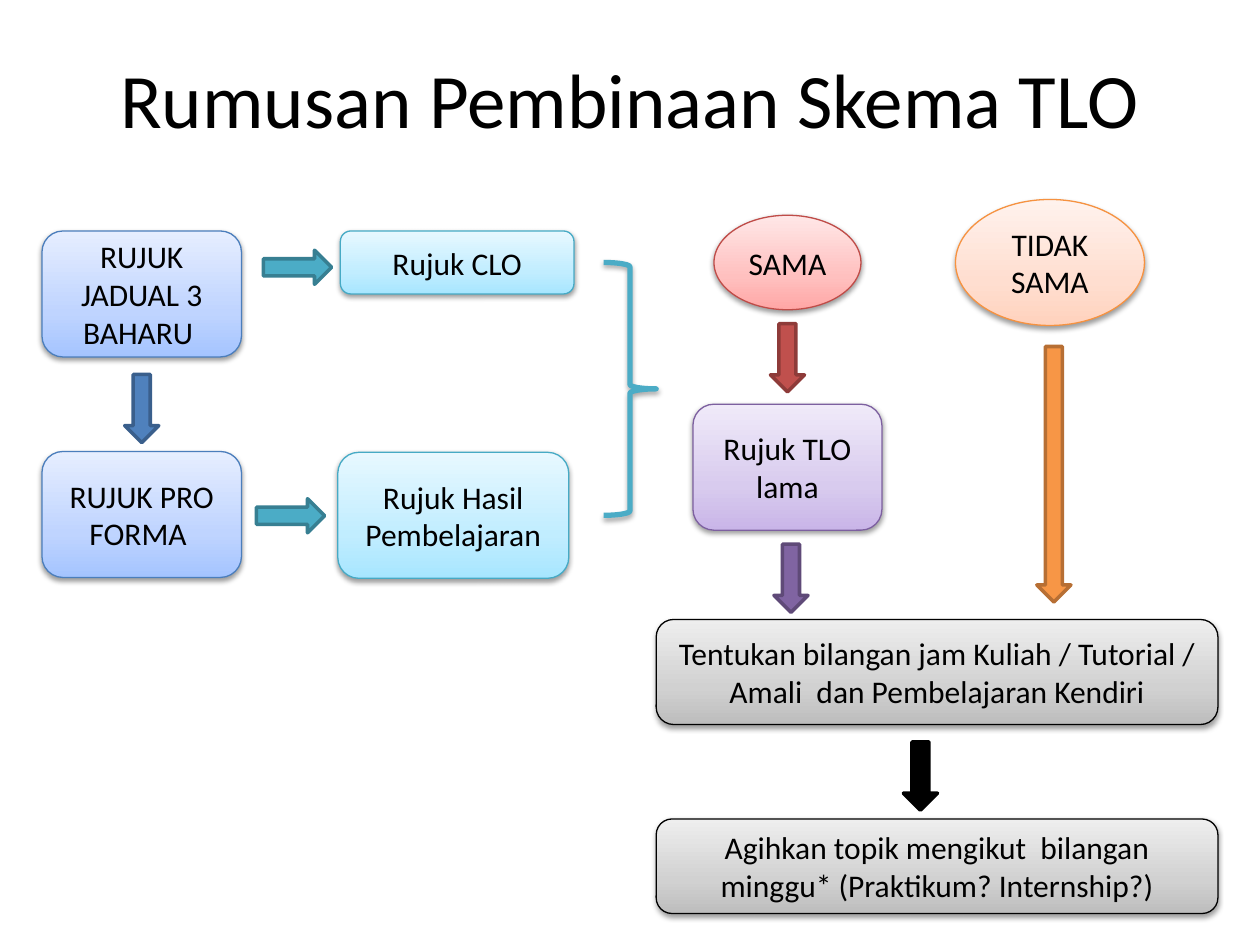
"""Build the flow slide that sums up how a TLO scheme is drawn up."""
from copy import deepcopy

from lxml import etree
from pptx import Presentation
from pptx.dml.color import RGBColor
from pptx.enum.shapes import MSO_SHAPE
from pptx.enum.text import MSO_ANCHOR, PP_ALIGN
from pptx.oxml.ns import qn
from pptx.util import Pt

ROUNDED, OVAL, BRACE = MSO_SHAPE.ROUNDED_RECTANGLE, MSO_SHAPE.OVAL, MSO_SHAPE.RIGHT_BRACE
RIGHT, DOWN = MSO_SHAPE.RIGHT_ARROW, MSO_SHAPE.DOWN_ARROW
CENTER, MIDDLE = PP_ALIGN.CENTER, MSO_ANCHOR.MIDDLE
FONT = "Calibri"
BLACK = RGBColor(0, 0, 0)
TEAL, TEAL_EDGE = RGBColor(0x4B, 0xAC, 0xC6), RGBColor(0x37, 0x7F, 0x92)
BLUE, BLUE_EDGE = RGBColor(0x4F, 0x81, 0xBD), RGBColor(0x3A, 0x5F, 0x8C)
RED, RED_EDGE = RGBColor(0xC0, 0x50, 0x4D), RGBColor(0x8E, 0x3B, 0x39)
PURPLE, PURPLE_EDGE = RGBColor(0x80, 0x64, 0xA2), RGBColor(0x5F, 0x4A, 0x78)
ORANGE, ORANGE_EDGE = RGBColor(0xF7, 0x96, 0x46), RGBColor(0xB7, 0x6F, 0x34)

STOPS = (0, 0.35, 1)
BLUE_TINT = [RGBColor.from_string(c) for c in ("A4C4FF", "BFD4FF", "E6EEFF", "4B7EBC")]
TEAL_TINT = [RGBColor.from_string(c) for c in ("A7E6FF", "C1EDFF", "E7F8FF", "46AAC5")]
GREY_TINT = [RGBColor.from_string(c) for c in ("BDBDBD", "D1D1D1", "EEEEEE", "000000")]
RED_TINT = [RGBColor.from_string(c) for c in ("FFA6A5", "FFC0BF", "FFE7E7", "BF4C48")]
PURPLE_TINT = [RGBColor.from_string(c) for c in ("C9B5E8", "D8CBEE", "F0EAF9", "7D60A0")]
ORANGE_TINT = [RGBColor.from_string(c) for c in ("FFD2BD", "FFDED0", "FFF2ED", "F69240")]

STEPS = [
    (ROUNDED, 24, 132, 114, 72, BLUE_TINT, "RUJUK JADUAL 3 BAHARU "),
    (ROUNDED, 24, 258, 114, 72, BLUE_TINT, "RUJUK PRO FORMA "),
    (ROUNDED, 194.5, 132, 133.5, 36, TEAL_TINT, "Rujuk CLO"),
    (ROUNDED, 193, 258.5, 132, 72, TEAL_TINT, "Rujuk Hasil Pembelajaran"),
    (OVAL, 408, 123, 84, 54, RED_TINT, "SAMA"),
    (OVAL, 546, 114, 108, 72, ORANGE_TINT, "TIDAK SAMA"),
    (ROUNDED, 396, 231, 108, 72, PURPLE_TINT, "Rujuk TLO lama"),
    (ROUNDED, 375, 354, 321, 60, GREY_TINT,
     "Tentukan bilangan jam Kuliah / Tutorial / Amali  dan Pembelajaran Kendiri"),
    (ROUNDED, 375, 468, 321, 54, GREY_TINT,
     "Agihkan topik mengikut  bilangan minggu* (Praktikum? Internship?)"),
]
THICK, LONG = 19.5, 39
ARROWS = [
    (RIGHT, 150.5, 143, LONG, THICK, TEAL, TEAL_EDGE),
    (RIGHT, 146.5, 285, LONG, THICK, TEAL, TEAL_EDGE),
    (DOWN, 71.25, 214, THICK, LONG, BLUE, BLUE_EDGE),
    (DOWN, 440.25, 185, THICK, LONG, RED, RED_EDGE),
    (DOWN, 442.25, 311, THICK, LONG, PURPLE, PURPLE_EDGE),
    (DOWN, 516.25, 424, THICK, LONG, BLACK, BLACK),
    (DOWN, 592.5, 198, THICK, 146, ORANGE, ORANGE_EDGE),
]


def add_outlined(kind, left, top, width, height, edge, weight):
    shape = slide.shapes.add_shape(kind, Pt(left), Pt(top), Pt(width), Pt(height))
    shape.shadow.inherit = False
    shape.line.color.rgb = edge
    shape.line.width = Pt(weight)
    return shape


def add_shadow(shape, distance, opacity):
    effects = shape._element.spPr.find(qn("a:effectLst"))
    shadow = etree.SubElement(effects, qn("a:outerShdw"), blurRad=str(Pt(3.1)),
                              dist=str(Pt(distance)), dir="5400000", rotWithShape="0")
    color = etree.SubElement(shadow, qn("a:srgbClr"), val="000000")
    etree.SubElement(color, qn("a:alpha"), val=str(opacity * 1000))


prs = Presentation()
prs.slide_width, prs.slide_height = Pt(720), Pt(540)
slide = prs.slides.add_slide(prs.slide_layouts[5])

title = slide.shapes.title
title.left, title.top, title.width, title.height = Pt(36), Pt(21.6), Pt(648), Pt(68.4)
title.text_frame.vertical_anchor = MIDDLE
heading = title.text_frame.paragraphs[0]
heading.alignment = CENTER
heading_run = heading.add_run()
heading_run.text = "Rumusan Pembinaan Skema TLO"
heading_run.font.name, heading_run.font.size = FONT, Pt(44)
heading_run.font.color.rgb = BLACK

brace = add_outlined(BRACE, 345, 150, 30, 144.5, TEAL, 3)
brace.fill.background()
add_shadow(brace, 1.8, 35)

for kind, left, top, width, height, tint, wording in STEPS:
    step = add_outlined(kind, left, top, width, height, tint[-1], 0.75)
    step.fill.gradient()
    step.fill.gradient_angle = 90
    stop_list = step._element.spPr.find(qn("a:gradFill")).find(qn("a:gsLst"))
    stop_list.insert(1, deepcopy(stop_list[0]))
    for stop, position, color in zip(step.fill.gradient_stops, STOPS, tint):
        stop.position = position
        stop.color.rgb = color
    add_shadow(step, 1.6, 38)
    step.text_frame.word_wrap = True
    step.text_frame.vertical_anchor = MIDDLE
    paragraph = step.text_frame.paragraphs[0]
    paragraph.alignment = CENTER
    run = paragraph.add_run()
    run.text = wording
    run.font.name, run.font.size = FONT, Pt(18)
    run.font.color.rgb = BLACK

for kind, left, top, width, height, color, edge in ARROWS:
    arrow = add_outlined(kind, left, top, width, height, edge, 2)
    arrow.fill.solid()
    arrow.fill.fore_color.rgb = color

prs.save("out.pptx")
